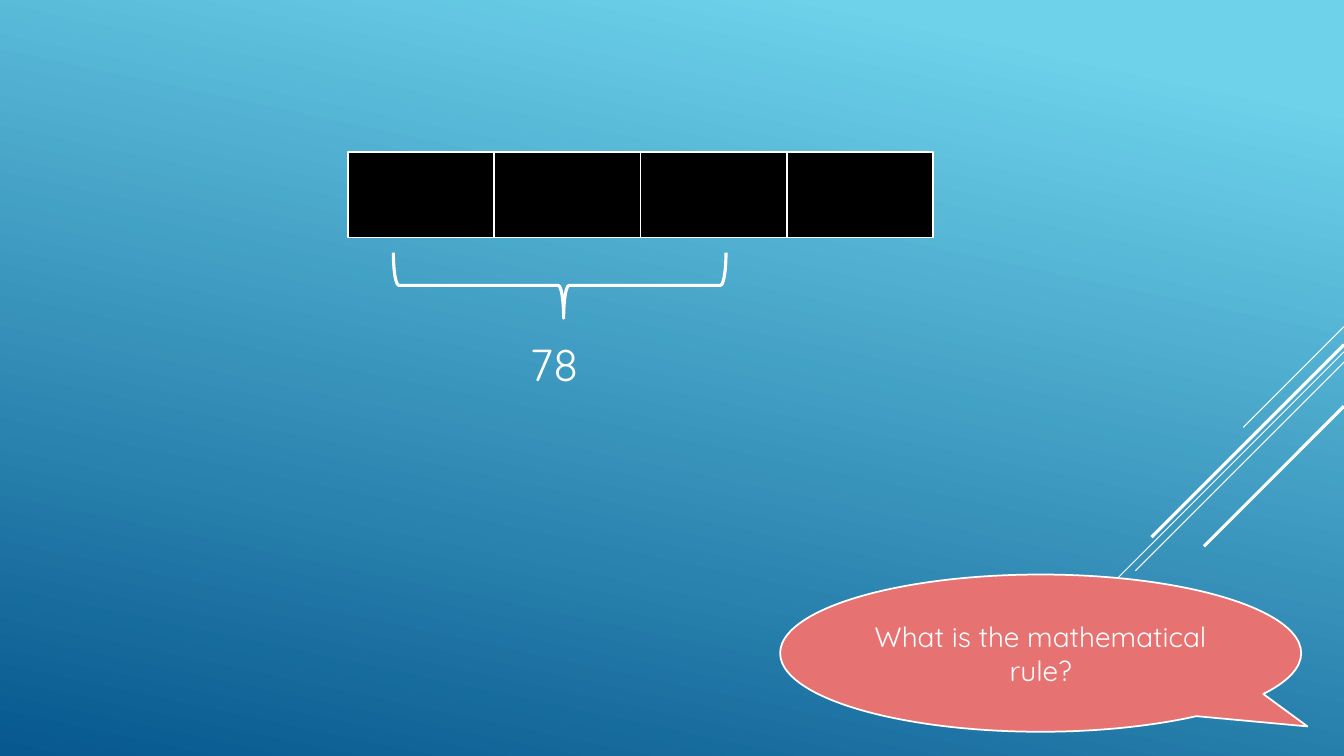
from lxml import etree
from pptx import Presentation
from pptx.dml.color import RGBColor
from pptx.enum.shapes import MSO_CONNECTOR, MSO_SHAPE
from pptx.enum.text import MSO_ANCHOR, MSO_AUTO_SIZE, PP_ALIGN
from pptx.oxml.ns import qn
from pptx.util import Pt

RECT = MSO_SHAPE.RECTANGLE
CALLOUT = MSO_SHAPE.OVAL_CALLOUT
BRACE = MSO_SHAPE.LEFT_BRACE
STRAIGHT = MSO_CONNECTOR.STRAIGHT
MIDDLE = MSO_ANCHOR.MIDDLE
CENTER = PP_ALIGN.CENTER
GROW = MSO_AUTO_SIZE.SHAPE_TO_FIT_TEXT

WHITE = RGBColor(0xFF, 0xFF, 0xFF)
BLACK = RGBColor(0x00, 0x00, 0x00)
CORAL = RGBColor(0xE6, 0x72, 0x72)
SKY = RGBColor(0x6E, 0xD2, 0xEB)
NAVY = RGBColor(0x06, 0x58, 0x8E)

WIDTH, HEIGHT = 960, 540


def add_outlined(kind, x, y, w, h, line_width, fill=None):
    sp = s.shapes.add_shape(kind, Pt(x), Pt(y), Pt(w), Pt(h))
    sp.shadow.inherit = False
    if fill is None:
        sp.fill.background()
    else:
        sp.fill.solid()
        sp.fill.fore_color.rgb = fill
    sp.line.color.rgb = WHITE
    sp.line.width = Pt(line_width)
    return sp


def set_text(tf, text, size):
    p = tf.paragraphs[0]
    p.text = text
    p.font.size = Pt(size)
    p.font.name = "Quicksand"
    p.font.color.rgb = WHITE
    return p


prs = Presentation()
prs.slide_width, prs.slide_height = Pt(WIDTH), Pt(HEIGHT)
s = prs.slides.add_slide(prs.slide_layouts[6])

# Background gradient
fill = s.background.fill
fill.gradient()
fill.gradient_angle = 258
for stop, position, color in zip(fill.gradient_stops, (0.1, 1), (SKY, NAVY)):
    stop.position = position
    stop.color.rgb = color

# Diagonal lines at 45 degrees from the right edge: start height, run, width
for y, run, line_width in [
    (233.3, 72, 0.75),
    (251.3, 235, 0.75),
    (258.7, 149, 0.75),
    (246.2, 137.5, 2.25),
    (290.2, 100, 2.25),
]:
    line = s.shapes.add_connector(STRAIGHT, Pt(WIDTH), Pt(y), Pt(WIDTH - run), Pt(y + run))
    line.line.color.rgb = WHITE
    line.line.width = Pt(line_width)
    etree.SubElement(line._element.spPr, qn("a:effectLst"))

# Question callout
callout = add_outlined(CALLOUT, 557.3, 410.4, 372.2, 112.3, 1.25, CORAL)
callout.adjustments[0] = 0.512
callout.adjustments[1] = 0.466
tf = callout.text_frame
tf.word_wrap = True
tf.vertical_anchor = MIDDLE
set_text(tf, "What is the mathematical rule?", 20).alignment = CENTER

# Bar model of four equal boxes
BOX_W = 104.5
for i in range(4):
    add_outlined(RECT, 248.5 + i * BOX_W, 108.7, BOX_W, 61, 1.25, BLACK)

# Brace under the bar, with its total
brace = add_outlined(BRACE, 376.4, 85, 46.8, 237.6, 2.25)
brace.rotation = 270
brace.adjustments[0] = 0.083
brace.adjustments[1] = 0.512

total = s.shapes.add_textbox(Pt(371.5), Pt(237), Pt(50.4), Pt(46))
tf = total.text_frame
tf.word_wrap = False
tf.auto_size = GROW
set_text(tf, "78", 32)

prs.save("out.pptx")
